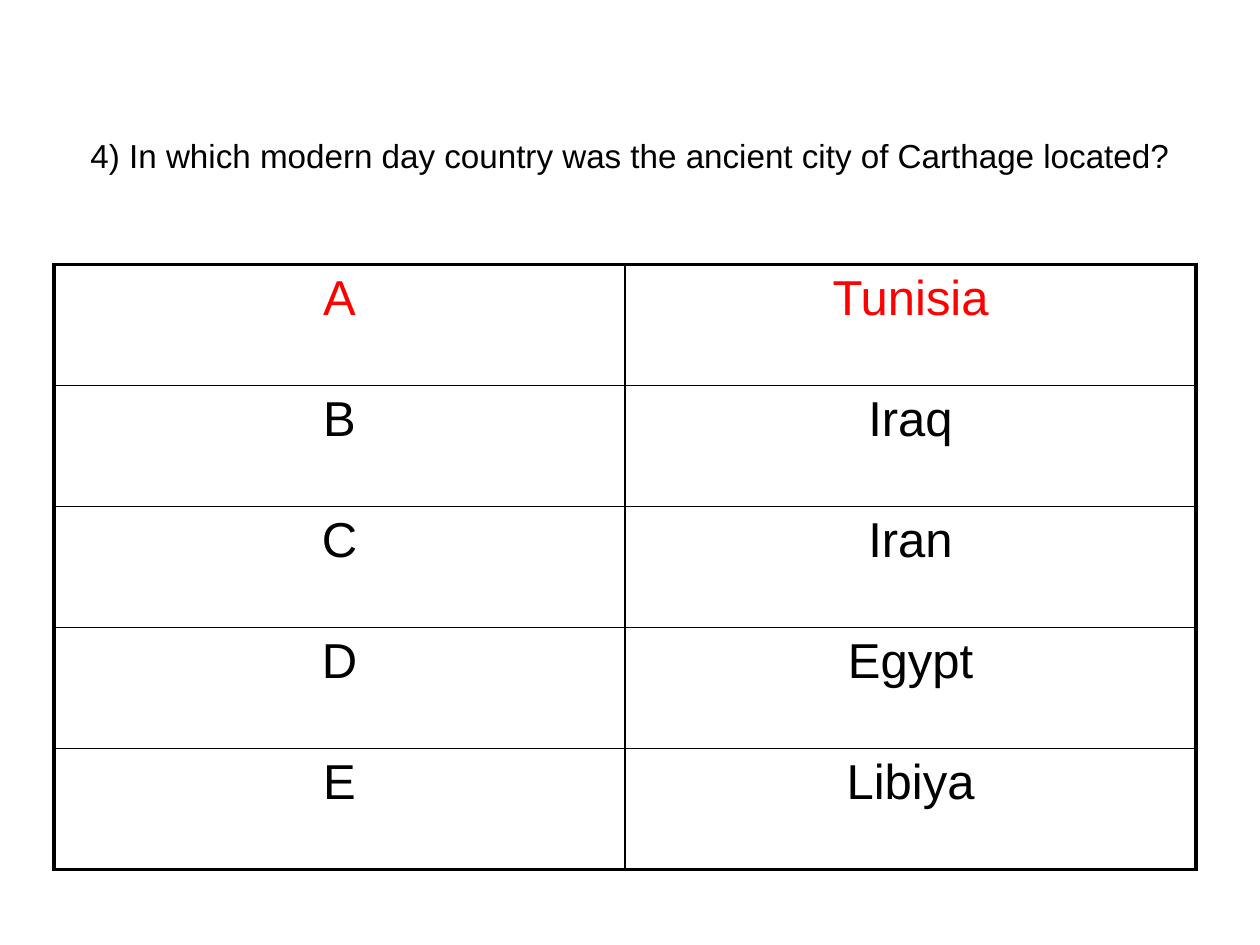
import pptx
import pptx.dml.color
import pptx.enum.text
import pptx.oxml
import pptx.oxml.ns
import pptx.util
from pptx.util import Cm

QUESTION = "4) In which modern day country was the ancient city of Carthage located?"
ANSWERS = [("A", "Tunisia"), ("B", "Iraq"), ("C", "Iran"), ("D", "Egypt"), ("E", "Libiya")]
CORRECT = "A"

FONT = "Arial"
BLACK, RED = "000000", "FF0000"
THICK, THIN = 2.25, 1

TABLE_LEFT, TABLE_TOP = 1.09, 5.33
COLUMN_WIDTH, ROW_HEIGHT = 11.51, 2.44


def rgb(value):
    return pptx.dml.color.RGBColor.from_string(value)


def write(frame, text, size=28, color=BLACK, align=pptx.enum.text.PP_ALIGN.CENTER):
    para = frame.paragraphs[0]
    para.alignment = align
    span = para.add_run()
    span.text = text
    span.font.name = FONT
    span.font.size = pptx.util.Pt(size)
    span.font.color.rgb = rgb(color)


def set_borders(cell, widths):
    """Draw the left, right, top and bottom cell edges, widths in points."""
    properties = cell._tc.get_or_add_tcPr()
    for index, (side, width) in enumerate(zip("LRTB", widths)):
        line = pptx.oxml.parse_xml(
            f'<a:ln{side} {pptx.oxml.ns.nsdecls("a")} w="{pptx.util.Pt(width)}">'
            f'<a:solidFill><a:srgbClr val="{BLACK}"/></a:solidFill></a:ln{side}>'
        )
        properties.insert(index, line)


def add_question(page):
    box = page.shapes.add_textbox(Cm(1.27), Cm(0.76), Cm(22.86), Cm(4.75))
    box.text_frame.word_wrap = True
    box.text_frame.vertical_anchor = pptx.enum.text.MSO_ANCHOR.MIDDLE
    write(box.text_frame, QUESTION, size=19)


def add_answers(page):
    row_count, column_count = len(ANSWERS), len(ANSWERS[0])
    table = page.shapes.add_table(
        row_count, column_count, Cm(TABLE_LEFT), Cm(TABLE_TOP),
        Cm(COLUMN_WIDTH * column_count), Cm(ROW_HEIGHT * row_count),
    ).table
    table.first_row = table.horz_banding = False
    for column in table.columns:
        column.width = Cm(COLUMN_WIDTH)
    for row, answer in enumerate(ANSWERS):
        table.rows[row].height = Cm(ROW_HEIGHT)
        for column, text in enumerate(answer):
            cell = table.cell(row, column)
            cell.fill.background()
            write(cell.text_frame, text, color=RED if answer[0] == CORRECT else BLACK)
            outer_edges = (column == 0, column == column_count - 1,
                           row == 0, row == row_count - 1)
            set_borders(cell, [THICK if outer else THIN for outer in outer_edges])


def main():
    deck = pptx.Presentation()
    deck.slide_width, deck.slide_height = Cm(25.4), Cm(19.05)
    page = deck.slides.add_slide(deck.slide_layouts[6])
    add_question(page)
    add_answers(page)
    deck.save("out.pptx")


if __name__ == "__main__":
    main()
